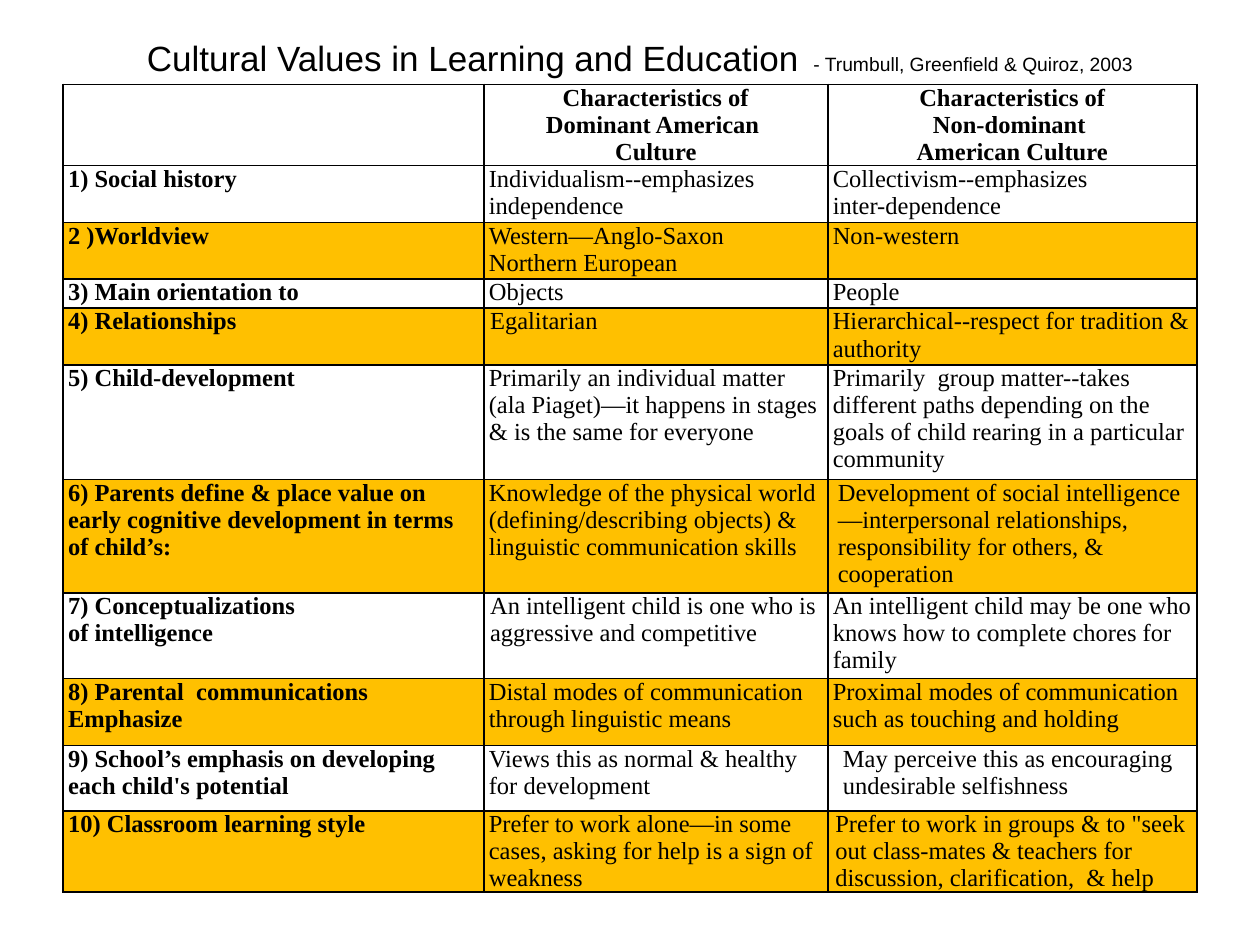
"""Build a slide comparing cultural values in learning and education."""
from dataclasses import dataclass

from lxml.etree import SubElement
from pptx import Presentation
from pptx.dml.color import RGBColor
from pptx.enum.text import MSO_ANCHOR, MSO_AUTO_SIZE, PP_ALIGN
from pptx.oxml.ns import qn
from pptx.util import Inches, Pt

COLORS = {"text": "000000", "border": "000000", "highlight": "FFC000"}
COLUMN_WIDTHS = (3.34, 2.73, 2.93)
HEADER_HEIGHT = 0.64


@dataclass(frozen=True)
class Comparison:
    topic: str
    dominant: str
    non_dominant: str
    height: float
    indents: tuple[float, float] = (0, 0)


HEADINGS = (
    "Characteristics of\nDominant American \nCulture",
    "Characteristics of\nNon-dominant \nAmerican Culture",
)
COMPARISONS = (
    Comparison("1) Social history", "Individualism--emphasizes  independence",
               "Collectivism--emphasizes\ninter-dependence", 0.45),
    Comparison("2 )Worldview", "Western—Anglo-Saxon\nNorthern European",
               "Non-western", 0.45),
    Comparison("3) Main orientation to", "Objects", "People", 0.23),
    Comparison("4) Relationships", "Egalitarian",
               "Hierarchical--respect for tradition & authority", 0.45, (0.01, 0)),
    Comparison("5) Child-development",
               "Primarily an individual matter (ala Piaget)—it happens in stages "
               "& is the same for everyone",
               "Primarily  group matter--takes different paths depending on the "
               "goals of child rearing in a particular community", 0.91),
    Comparison("6) Parents define & place value on early cognitive development "
               "in terms of child’s:",
               "Knowledge of the physical world (defining/describing objects) & "
               "linguistic communication skills",
               "Development of social intelligence—interpersonal relationships, "
               "responsibility for others, & cooperation", 0.9, (0, 0.04)),
    Comparison("7) Conceptualizations\nof intelligence",
               "An intelligent child is one who is aggressive and competitive",
               "An intelligent child may be one who knows how to complete chores "
               "for family", 0.68, (0.01, 0)),
    Comparison("8) Parental  communications\nEmphasize",
               "Distal modes of communication through linguistic means",
               "Proximal modes of communication such as touching and holding", 0.53),
    Comparison("9) School’s emphasis on developing each child's potential",
               "Views this as normal & healthy for development",
               "May perceive this as encouraging undesirable selfishness",
               0.52, (0, 0.08)),
    Comparison("10) Classroom learning style",
               "Prefer to work alone—in some cases, asking for help is a sign of "
               "weakness",
               "Prefer to work in groups & to \"seek out class-mates & teachers for "
               "discussion, clarification,  & help", 0.64, (0, 0.02)),
)


def add_text(paragraph, text: str, *, size: float, font: str, bold: bool = False,
             align=PP_ALIGN.LEFT, indent: float = 0) -> None:
    """Append a formatted run to a paragraph."""
    properties = paragraph._p.get_or_add_pPr()
    properties.set("marL", str(Inches(indent)))
    properties.set("indent", "0")
    paragraph.alignment = align
    paragraph.space_before = Pt(0)
    run = paragraph.add_run()
    run.text = text
    run.font.size = Pt(size)
    run.font.name = font
    run.font.bold = bold
    run.font.color.rgb = RGBColor.from_string(COLORS["text"])


def style_cell(cell, highlighted: bool) -> None:
    """Set the margins, borders and fill of a cell."""
    cell.margin_left = cell.margin_right = Inches(0.04)
    cell.margin_top = cell.margin_bottom = 0
    properties = cell._tc.get_or_add_tcPr()
    for side in ("a:lnL", "a:lnR", "a:lnT", "a:lnB"):
        border = SubElement(properties, qn(side), w=str(Pt(1)))
        SubElement(SubElement(border, qn("a:solidFill")), qn("a:srgbClr"),
                   val=COLORS["border"])
    if highlighted:
        cell.fill.solid()
        cell.fill.fore_color.rgb = RGBColor.from_string(COLORS["highlight"])
    else:
        cell.fill.background()


def fill_cell(cell, text: str, **text_format) -> None:
    """Write each line of text as a paragraph of the cell."""
    frame = cell.text_frame
    for number, line in enumerate(text.split("\n")):
        paragraph = frame.add_paragraph() if number else frame.paragraphs[0]
        add_text(paragraph, line, size=14, font="Times New Roman", **text_format)


def add_title(slide) -> None:
    """Place the title and its citation on one line."""
    title = slide.shapes.title
    title.left, title.top = Inches(0.58), Inches(0.25)
    title.width, title.height = Inches(9), Inches(0.58)
    frame = title.text_frame
    frame.auto_size = MSO_AUTO_SIZE.NONE
    frame.word_wrap = True
    frame.vertical_anchor = MSO_ANCHOR.MIDDLE
    frame.margin_bottom = Inches(0.22)
    for text, size in (("Cultural Values in Learning and Education", 20), (" ", 18),
                       (" - Trumbull, Greenfield & Quiroz, 2003", 11)):
        add_text(frame.paragraphs[0], text, size=size, font="Arial",
                 align=PP_ALIGN.CENTER)


def add_comparison_table(slide) -> None:
    """Draw the table, highlighting every second topic."""
    heights = (HEADER_HEIGHT, *(entry.height for entry in COMPARISONS))
    table = slide.shapes.add_table(
        len(heights), len(COLUMN_WIDTHS), Inches(0.5), Inches(0.67),
        Inches(sum(COLUMN_WIDTHS)), Inches(sum(heights))).table
    table.first_row = table.horz_banding = False
    for column, width in zip(table.columns, COLUMN_WIDTHS):
        column.width = Inches(width)
    for number, (row, height) in enumerate(zip(table.rows, heights)):
        row.height = Inches(height)
        for cell in row.cells:
            style_cell(cell, number > 0 and number % 2 == 0)

    for column, heading in enumerate(HEADINGS, start=1):
        fill_cell(table.cell(0, column), heading, bold=True, align=PP_ALIGN.CENTER)
    for number, entry in enumerate(COMPARISONS, start=1):
        fill_cell(table.cell(number, 0), entry.topic, bold=True)
        values = zip((entry.dominant, entry.non_dominant), entry.indents)
        for column, (value, indent) in enumerate(values, start=1):
            fill_cell(table.cell(number, column), value, indent=indent)


def main() -> None:
    """Create and save the presentation."""
    presentation = Presentation()
    presentation.slide_width, presentation.slide_height = Inches(10), Inches(7.5)
    slide = presentation.slides.add_slide(presentation.slide_layouts[5])
    add_title(slide)
    add_comparison_table(slide)
    presentation.save("out.pptx")


if __name__ == "__main__":
    main()
